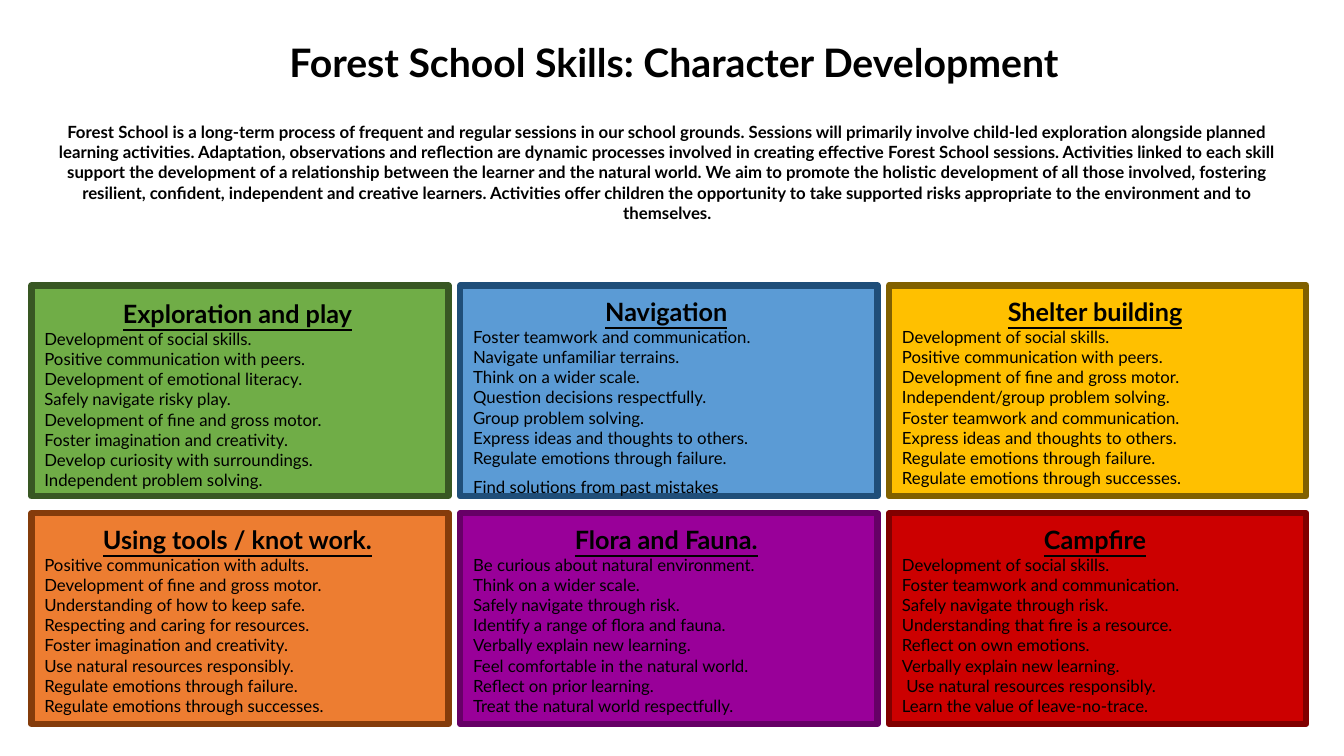
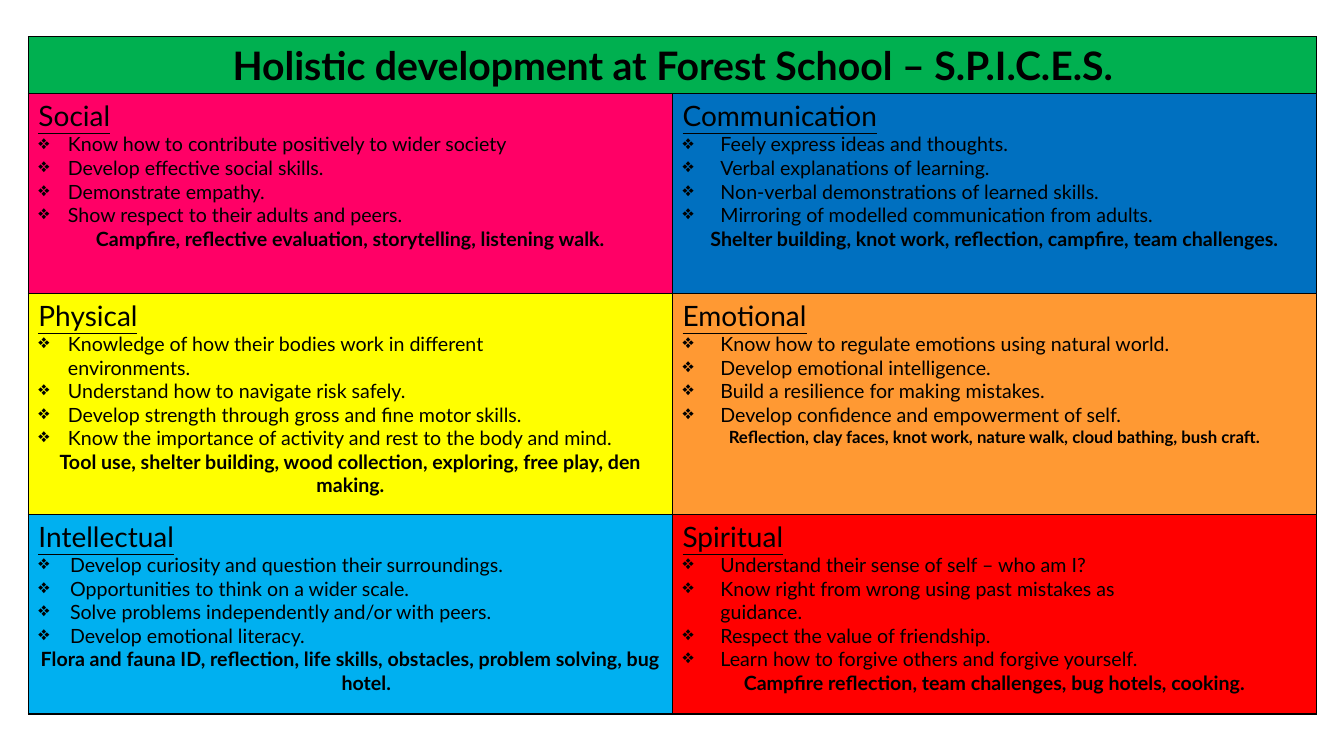
import copy
import pptx
import pptx.util
import pptx.oxml
import pptx.oxml.ns
import pptx.dml.color
import pptx.enum.shapes
import pptx.enum.text
import lxml.etree

Pt = pptx.util.Pt
RGB = pptx.dml.color.RGBColor.from_string
qn = pptx.oxml.ns.qn
MID = pptx.enum.text.PP_ALIGN.CENTER
LEFT = pptx.enum.text.PP_ALIGN.LEFT

theme = {
    "ink": "000000",
    "band": "00B050",
    "edge": 4.5,
    "rule": 1,
    "title": {"name": "Lato", "size": Pt(28), "bold": True, "underline": False},
    "head": {"name": "Lato", "size": Pt(18), "bold": True, "underline": True},
    "body": {"name": "Lato", "size": Pt(12), "bold": False, "underline": False},
    "strong": {"name": "Lato", "size": Pt(12), "bold": True, "underline": False},
    "topic": {"name": "Lato", "size": Pt(20), "bold": False, "underline": True},
    "point": {"name": "Lato", "size": Pt(14), "bold": False, "underline": False},
    "close": {"name": "Lato", "size": Pt(14), "bold": True, "underline": False},
}


def write(frame, lines):
    frame.word_wrap = True
    for n, (text, style, align) in enumerate(lines):
        para = frame.add_paragraph() if n else frame.paragraphs[0]
        para.text = text
        para.alignment = align
        for run in para.runs:
            for key, value in theme[style].items():
                setattr(run.font, key, value)
            run.font.color.rgb = RGB(theme["ink"])
        for gap in para._p.findall(qn("a:br")):
            gap.append(copy.deepcopy(para.runs[0]._r.rPr))


def paint(cell, color):
    cell.fill.solid()
    cell.fill.fore_color.rgb = RGB(color)
    props = cell._tc.get_or_add_tcPr()
    for n, side in enumerate(["a:lnL", "a:lnR", "a:lnT", "a:lnB"]):
        line = pptx.oxml.parse_xml(
            f'<{side} xmlns:a="http://schemas.openxmlformats.org/drawingml/2006/main" '
            f'w="{Pt(theme["rule"])}"><a:solidFill><a:srgbClr val="{theme["ink"]}"/>'
            f'</a:solidFill></{side}>')
        props.insert(n, line)


deck = pptx.Presentation()
deck.slide_width, deck.slide_height = Pt(960), Pt(540)
blank = deck.slide_layouts[6]

slide = deck.slides.add_slide(blank)
box = slide.shapes.add_textbox(Pt(130.3), Pt(23.8), Pt(702), Pt(75))
write(box.text_frame, [("Forest School Skills: Character Development", "title", MID)])

intro = (
    "Forest School is a long-term process of frequent and regular sessions in our school grounds. "
    "Sessions will primarily involve child-led exploration alongside planned learning activities. "
    "Adaptation, observations and reflection are dynamic processes involved in creating effective "
    "Forest School sessions. Activities linked to each skill support the development of a "
    "relationship between the learner and the natural world. We aim to promote the holistic "
    "development of all those involved, fostering resilient, confident, independent and creative "
    "learners. Activities offer children the opportunity to take supported risks appropriate to "
    "the environment and to themselves.")
box = slide.shapes.add_textbox(Pt(30.2), Pt(83.5), Pt(893), Pt(80))
write(box.text_frame, [(intro, "strong", MID)])

skills = [
    ("Exploration and play", "70AD47", "385723", 5.7, 0, [
        "Development of social skills.",
        "Positive communication with peers.",
        "Development of emotional literacy.",
        "Safely navigate risky play.",
        "Development of fine and gross motor.",
        "Foster imagination and creativity.",
        "Develop curiosity with surroundings.",
        "Independent problem solving."]),
    ("Navigation", "5B9BD5", "1F4E79", 4.3, 6.3, [
        "Foster teamwork and communication.",
        "Navigate unfamiliar terrains.",
        "Think on a wider scale.",
        "Question decisions respectfully.",
        "Group problem solving.",
        "Express ideas and thoughts to others.",
        "Regulate emotions through failure.",
        "Find solutions from past mistakes"]),
    ("Shelter building", "FFC000", "806000", 4.3, 0, [
        "Development of social skills.",
        "Positive communication with peers.",
        "Development of fine and gross motor.",
        "Independent/group problem solving.",
        "Foster teamwork and communication.",
        "Express ideas and thoughts to others.",
        "Regulate emotions through failure.",
        "Regulate emotions through successes."]),
    ("Using tools / knot work.", "ED7D31", "843C0B", 4.3, 0, [
        "Positive communication with adults.",
        "Development of fine and gross motor.",
        "Understanding of how to keep safe.",
        "Respecting and caring for resources.",
        "Foster imagination and creativity.",
        "Use natural resources responsibly.",
        "Regulate emotions through failure.",
        "Regulate emotions through successes."]),
    ("Flora and Fauna.", "990099", "660066", 4.3, 0, [
        "Be curious about natural environment.",
        "Think on a wider scale.",
        "Safely navigate through risk.",
        "Identify a range of flora and fauna.",
        "Verbally explain new learning.",
        "Feel comfortable in the natural world.",
        "Reflect on prior learning.",
        "Treat the natural world respectfully."]),
    ("Campfire", "CC0000", "800000", 4.3, 0, [
        "Development of social skills.",
        "Foster teamwork and communication.",
        "Safely navigate through risk.",
        "Understanding that fire is a resource.",
        "Reflect on own emotions.",
        "Verbally explain new learning.",
        " Use natural resources responsibly.",
        "Learn the value of leave-no-trace."]),
]
for n, (head, fill, edge, drop, space, lines) in enumerate(skills):
    left = 22.4 + n % 3 * 306.3
    top = 203.9 + n // 3 * 162.7
    panel = slide.shapes.add_shape(
        pptx.enum.shapes.MSO_SHAPE.RECTANGLE, Pt(left), Pt(top), Pt(298), Pt(150.5))
    panel.shadow.inherit = False
    panel.fill.solid()
    panel.fill.fore_color.rgb = RGB(fill)
    panel.line.color.rgb = RGB(edge)
    panel.line.width = Pt(theme["edge"])
    box = slide.shapes.add_textbox(Pt(left + 2.2), Pt(top + drop), Pt(290), Pt(145.5))
    write(box.text_frame, [(head, "head", MID)] + [(line, "body", LEFT) for line in lines])
    box.text_frame.paragraphs[-1].space_before = Pt(space)

slide = deck.slides.add_slide(blank)
heights = [40.3, 142.6, 157.8, 142.6]
grid = slide.shapes.add_table(4, 2, Pt(20.3), Pt(26.2), Pt(920.2), Pt(sum(heights))).table
grid.first_row = grid.horz_banding = False
for row, height in zip(grid.rows, heights):
    row.height = Pt(height)
for col in grid.columns:
    col.width = Pt(460.1)

grid.cell(0, 0).merge(grid.cell(0, 1))
for n in range(2):
    paint(grid.cell(0, n), theme["band"])
write(grid.cell(0, 0).text_frame,
      [("Holistic development at Forest School – S.P.I.C.E.S.", "title", MID)])

spices = [
    ("Social", "FF0066", 21, "close", [
        "Know how to contribute positively to wider society",
        "Develop effective social skills.",
        "Demonstrate empathy.",
        "Show respect to their adults and peers."],
     "Campfire, reflective evaluation, storytelling, listening walk."),
    ("Communication", "0070C0", 27, "close", [
        "Feely express ideas and thoughts.",
        "Verbal explanations of learning.",
        "Non-verbal demonstrations of learned skills.",
        "Mirroring of modelled communication from adults."],
     "Shelter building, knot work, reflection, campfire, team challenges."),
    ("Physical", "FFFF00", 21, "close", [
        "Knowledge of how their bodies work in different\nenvironments.",
        "Understand how to navigate risk safely.",
        "Develop strength through gross and fine motor skills.",
        "Know the importance of activity and rest to the body and mind."],
     "Tool use, shelter building, wood collection, exploring, free play, den making."),
    ("Emotional", "FF9933", 27, "strong", [
        "Know how to regulate emotions using natural world.",
        "Develop emotional intelligence.",
        "Build a resilience for making mistakes.",
        "Develop confidence and empowerment of self."],
     "Reflection, clay faces, knot work, nature walk, cloud bathing, bush craft."),
    ("Intellectual", "00B0F0", 22.5, "close", [
        "Develop curiosity and question their surroundings.",
        "Opportunities to think on a wider scale.",
        "Solve problems independently and/or with peers.",
        "Develop emotional literacy."],
     "Flora and fauna ID, reflection, life skills, obstacles, problem solving, bug hotel."),
    ("Spiritual", "FF0000", 27, "close", [
        "Understand their sense of self – who am I?",
        "Know right from wrong using past mistakes as\nguidance.",
        "Respect the value of friendship.",
        "Learn how to forgive others and forgive yourself."],
     "Campfire reflection, team challenges, bug hotels, cooking."),
]
for n, (topic, fill, dent, style, points, close) in enumerate(spices):
    cell = grid.cell(1 + n // 2, n % 2)
    paint(cell, fill)
    lines = [(topic, "topic", LEFT)] + [(point, "point", LEFT) for point in points]
    write(cell.text_frame, lines + [(close, style, MID)])
    paras = cell.text_frame.paragraphs
    hung = paras[1:] if topic == "Intellectual" else paras[1:-1]
    for para in hung:
        props = para._p.get_or_add_pPr()
        props.set("marL", str(Pt(dent)))
        props.set("indent", str(-Pt(dent)))
    for para in paras[1:-1]:
        mark = lxml.etree.SubElement(para._p.get_or_add_pPr(), qn("a:buChar"))
        mark.set("char", "❖")

deck.save("out.pptx")
